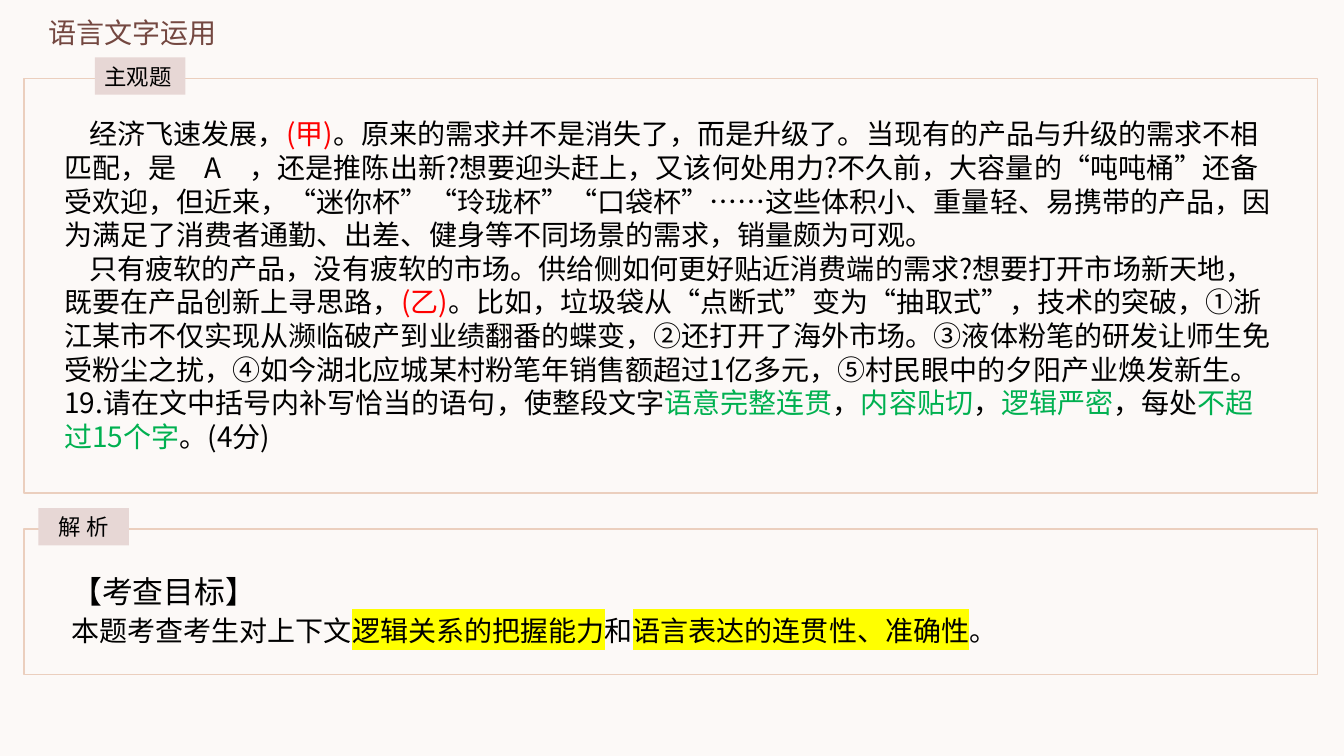
import pptx
import pptx.dml.color
import pptx.enum.shapes
import pptx.enum.text
import pptx.oxml.ns
import pptx.util
from lxml import etree

WIDE, HIGH = 13.33, 7.5
FONT = "Noto Sans CJK SC"
HUES = {
    "back": "FCF9F7", "title": "744841", "frame": "EBCFBE", "tab": "E7D7D5",
    "ink": "000000", "gap": "FF0000", "key": "00B050", "mark": "FFFF00",
}
FRAME_X, FRAME_W = 0.24, 12.83
TAB_W, TAB_H, TAB_RISE = 0.9, 0.37, 0.21
INDENT = 0.25

# Each paragraph is a list of (text, style) runs.
PASSAGE = [
    [("经济飞速发展，", None), ("(甲)", "gap"),
     ("。原来的需求并不是消失了，而是升级了。当现有的产品与升级的需求不相匹配，"
      "是　A　，还是推陈出新?想要迎头赶上，又该何处用力?不久前，大容量的“吨吨桶”"
      "还备受欢迎，但近来，“迷你杯”“玲珑杯”“口袋杯”……这些体积小、重量轻、"
      "易携带的产品，因为满足了消费者通勤、出差、健身等不同场景的需求，销量颇为可观。", None)],
    [("只有疲软的产品，没有疲软的市场。供给侧如何更好贴近消费端的需求?"
      "想要打开市场新天地，既要在产品创新上寻思路，", None), ("(乙)", "gap"),
     ("。比如，垃圾袋从“点断式”变为“抽取式”，技术的突破，"
      "①浙江某市不仅实现从濒临破产到业绩翻番的蝶变，②还打开了海外市场。"
      "③液体粉笔的研发让师生免受粉尘之扰，④如今湖北应城某村粉笔年销售额超过1亿多元，"
      "⑤村民眼中的夕阳产业焕发新生。", None)],
]
TASK = [("19.请在文中括号内补写恰当的语句，使整段文字", None), ("语意完整连贯", "key"),
        ("，", None), ("内容贴切", "key"), ("，", None), ("逻辑严密", "key"),
        ("，每处", None), ("不超过15个字", "key"), ("。(4分)", None)]
AIM = [("本题考查考生对上下文", None), ("逻辑关系的把握能力", "mark"), ("和", None),
       ("语言表达的连贯性、准确性", "mark"), ("。", None)]


def color(name):
    return pptx.dml.color.RGBColor.from_string(HUES[name])


def inches(*sizes):
    return [pptx.util.Inches(size) for size in sizes]


def add_xml(parent, tag, **attrs):
    return etree.SubElement(parent, pptx.oxml.ns.qn(tag), **attrs)


def write(para, runs, size, hue="ink", font=FONT, pitch=None, indent=0):
    """Fill one paragraph; pitch is the exact line height in points."""
    para.font.size = pptx.util.Pt(size)
    para.font.color.rgb = color(hue)
    para.font.name = font
    add_xml(para.font._element, "a:ea", typeface=FONT)
    if pitch:
        para.line_spacing = pptx.util.Pt(pitch)
    if indent:
        para._p.get_or_add_pPr().set("indent", str(pptx.util.Inches(indent)))
    for text, style in runs:
        run = para.add_run()
        run.text = text
        if style == "mark":
            light = add_xml(run.font._element, "a:highlight")
            add_xml(light, "a:srgbClr", val=HUES[style])
        elif style:
            run.font.color.rgb = color(style)


def add_text(slide, box, paras):
    """Place a text box; each paragraph is a dict of arguments for write."""
    frame = slide.shapes.add_textbox(*inches(*box)).text_frame
    frame.word_wrap = True
    for count, args in enumerate(paras):
        write(frame.add_paragraph() if count else frame.paragraphs[0], **args)


def add_rect(slide, box, fill=None, line=None):
    kind = pptx.enum.shapes.MSO_SHAPE.RECTANGLE
    rect = slide.shapes.add_shape(kind, *inches(*box))
    rect.shadow.inherit = False
    if fill:
        rect.fill.solid()
        rect.fill.fore_color.rgb = color(fill)
    else:
        rect.fill.background()
    if line:
        rect.line.color.rgb = color(line)
        rect.line.width = pptx.util.Pt(1)
    else:
        rect.line.fill.background()
    return rect


def add_panel(slide, top, height, label, tab_x, align):
    """Draw an outlined panel with a label tab across its top edge."""
    add_rect(slide, (FRAME_X, top, FRAME_W, height), line="frame")
    tab = add_rect(slide, (tab_x, top - TAB_RISE, TAB_W, TAB_H), fill="tab")
    tab.text_frame.word_wrap = False
    tab.text_frame.vertical_anchor = pptx.enum.text.MSO_ANCHOR.MIDDLE
    para = tab.text_frame.paragraphs[0]
    para.alignment = align
    write(para, [(label, None)], 16)


def add_question(slide, top, height):
    align = pptx.enum.text.PP_ALIGN
    add_panel(slide, top, height, "主观题", FRAME_X + 0.7, align.LEFT)
    paras = [dict(runs=runs, size=20, pitch=24, indent=INDENT) for runs in PASSAGE]
    paras.append(dict(runs=TASK, size=20, pitch=24))
    add_text(slide, (FRAME_X + 0.3, top + 0.33, 12.2, 3.55), paras)


def add_answer(slide, top, height):
    align = pptx.enum.text.PP_ALIGN
    add_panel(slide, top, height, "解 析", FRAME_X + 0.14, align.CENTER)
    add_text(slide, (FRAME_X + 0.37, top + 0.37, 12.28, 0.84), [
        dict(runs=[("【考查目标】", None)], size=22, font="Arial", pitch=27),
        dict(runs=AIM, size=20, pitch=27),
    ])


def main():
    deck = pptx.Presentation()
    deck.slide_width, deck.slide_height = inches(WIDE, HIGH)
    slide = deck.slides.add_slide(deck.slide_layouts[6])
    slide.background.fill.solid()
    slide.background.fill.fore_color.rgb = color("back")
    title = dict(runs=[("语言文字运用", None)], size=20, hue="title", pitch=24)
    add_text(slide, (0.38, 0.1, 2.34, 0.44), [title])
    add_question(slide, 0.78, 4.11)
    add_answer(slide, 5.25, 1.44)
    deck.save("out.pptx")


if __name__ == "__main__":
    main()
